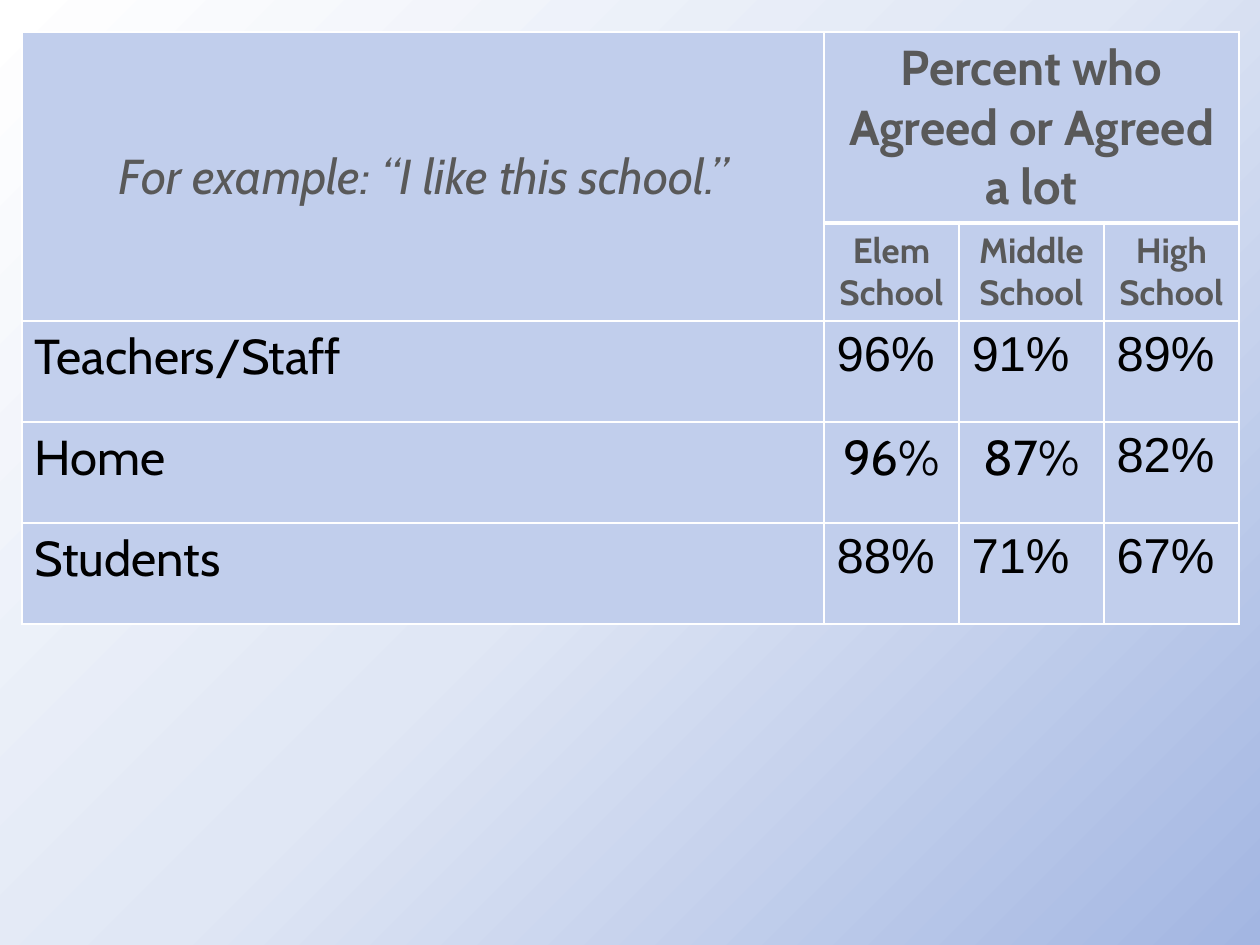
import lxml.etree
import pptx
import pptx.dml.color
import pptx.enum.text
import pptx.oxml
import pptx.oxml.ns
import pptx.util

RGBColor = pptx.dml.color.RGBColor
Align = pptx.enum.text.PP_ALIGN
Anchor = pptx.enum.text.MSO_ANCHOR

BLACK = RGBColor(0x00, 0x00, 0x00)
GRAY = RGBColor(0x59, 0x59, 0x59)
WHITE = RGBColor(0xFF, 0xFF, 0xFF)
CELL_BLUE = RGBColor(0xC1, 0xCE, 0xEC)
BACK_BLUE = RGBColor(0xA3, 0xB6, 0xE2)
BACK_PALE = RGBColor(0xE0, 0xE7, 0xF5)

EMU_PER_PX = 914400 / 126
HEADING_FONT = "Cabin"
NUMBER_FONT = "Arial"


def px(length):
    return pptx.util.Emu(round(length * EMU_PER_PX))


class SurveySlide:
    def __init__(self, deck):
        self.page = deck.slides.add_slide(deck.slide_layouts[6])

    def background(self, colors):
        fill = self.page.background.fill
        fill.gradient()
        gradient = self.page.background._cSld.bg.bgPr.find(pptx.oxml.ns.qn("a:gradFill"))
        step = 100000 // (len(colors) - 1)
        stops = "".join(
            f'<a:gs pos="{index * step}"><a:srgbClr val="{color}"/></a:gs>'
            for index, color in enumerate(colors)
        )
        radial = pptx.oxml.parse_xml(
            f'<a:gradFill {pptx.oxml.ns.nsdecls("a")} rotWithShape="1"><a:gsLst>{stops}</a:gsLst>'
            '<a:path path="circle"><a:fillToRect l="100000" t="100000"/></a:path></a:gradFill>'
        )
        gradient.getparent().replace(gradient, radial)

    def table(self, left, top, widths, heights):
        frame = self.page.shapes.add_table(
            len(heights), len(widths), px(left), px(top), px(sum(widths)), px(sum(heights))
        )
        grid = frame.table
        for column, width in zip(grid.columns, widths):
            column.width = px(width)
        for row, height in zip(grid.rows, heights):
            row.height = px(height)
        return grid

    def cell_style(self, cell, top=1, bottom=1):
        properties = cell._tc.get_or_add_tcPr()
        for side, points in (("L", 1), ("R", 1), ("T", top), ("B", bottom)):
            line = lxml.etree.SubElement(
                properties, pptx.oxml.ns.qn(f"a:ln{side}"), w=str(pptx.util.Pt(points))
            )
            solid = lxml.etree.SubElement(line, pptx.oxml.ns.qn("a:solidFill"))
            lxml.etree.SubElement(solid, pptx.oxml.ns.qn("a:srgbClr"), val=str(WHITE))
        cell.fill.solid()
        cell.fill.fore_color.rgb = CELL_BLUE

    def cell_text(self, cell, lines, font=HEADING_FONT, size=28, color=BLACK,
                  bold=False, italic=False, align=Align.LEFT):
        frame = cell.text_frame
        for index, line in enumerate(lines):
            para = frame.add_paragraph() if index else frame.paragraphs[0]
            para.alignment = align
            span = para.add_run()
            span.text = line
            span.font.name = font
            span.font.size = pptx.util.Pt(size)
            span.font.color.rgb = color
            span.font.bold = bold
            span.font.italic = italic


def main():
    deck = pptx.Presentation()
    deck.slide_width, deck.slide_height = px(1260), px(945)
    slide = SurveySlide(deck)
    slide.background([BACK_BLUE, BACK_PALE, WHITE])

    grid = slide.table(22, 32, [802, 135, 145, 135], [155, 77, 101, 101, 101])
    for row in range(5):
        for column in range(4):
            slide.cell_style(
                grid.cell(row, column),
                top=3 if row == 1 and column else 1,
                bottom=3 if row == 0 and column else 1,
            )
    grid.cell(0, 0).merge(grid.cell(1, 0))
    grid.cell(0, 1).merge(grid.cell(0, 3))

    example = grid.cell(0, 0)
    example.vertical_anchor = Anchor.MIDDLE
    slide.cell_text(example, ["For example: “I like this school.”"],
                    color=GRAY, italic=True, align=Align.CENTER)
    slide.cell_text(grid.cell(0, 1), ["Percent who Agreed or Agreed a lot"],
                    color=GRAY, bold=True, align=Align.CENTER)
    schools = [["Elem", "School"], ["Middle School"], ["High School"]]
    for column, lines in enumerate(schools, 1):
        slide.cell_text(grid.cell(1, column), lines, size=20,
                        color=GRAY, bold=True, align=Align.CENTER)

    results = [
        ("Teachers/Staff", ["96%", "91%", "89%"]),
        ("Home", ["96%", "87%", "82%"]),
        ("Students", ["88%", "71%", "67%"]),
    ]
    centered = {(3, 1), (3, 2)}
    for row, (group, values) in enumerate(results, 2):
        slide.cell_text(grid.cell(row, 0), [group])
        for column, value in enumerate(values, 1):
            if (row, column) in centered:
                slide.cell_text(grid.cell(row, column), [value], align=Align.CENTER)
            else:
                slide.cell_text(grid.cell(row, column), [value], font=NUMBER_FONT)

    deck.save("out.pptx")


if __name__ == "__main__":
    main()
